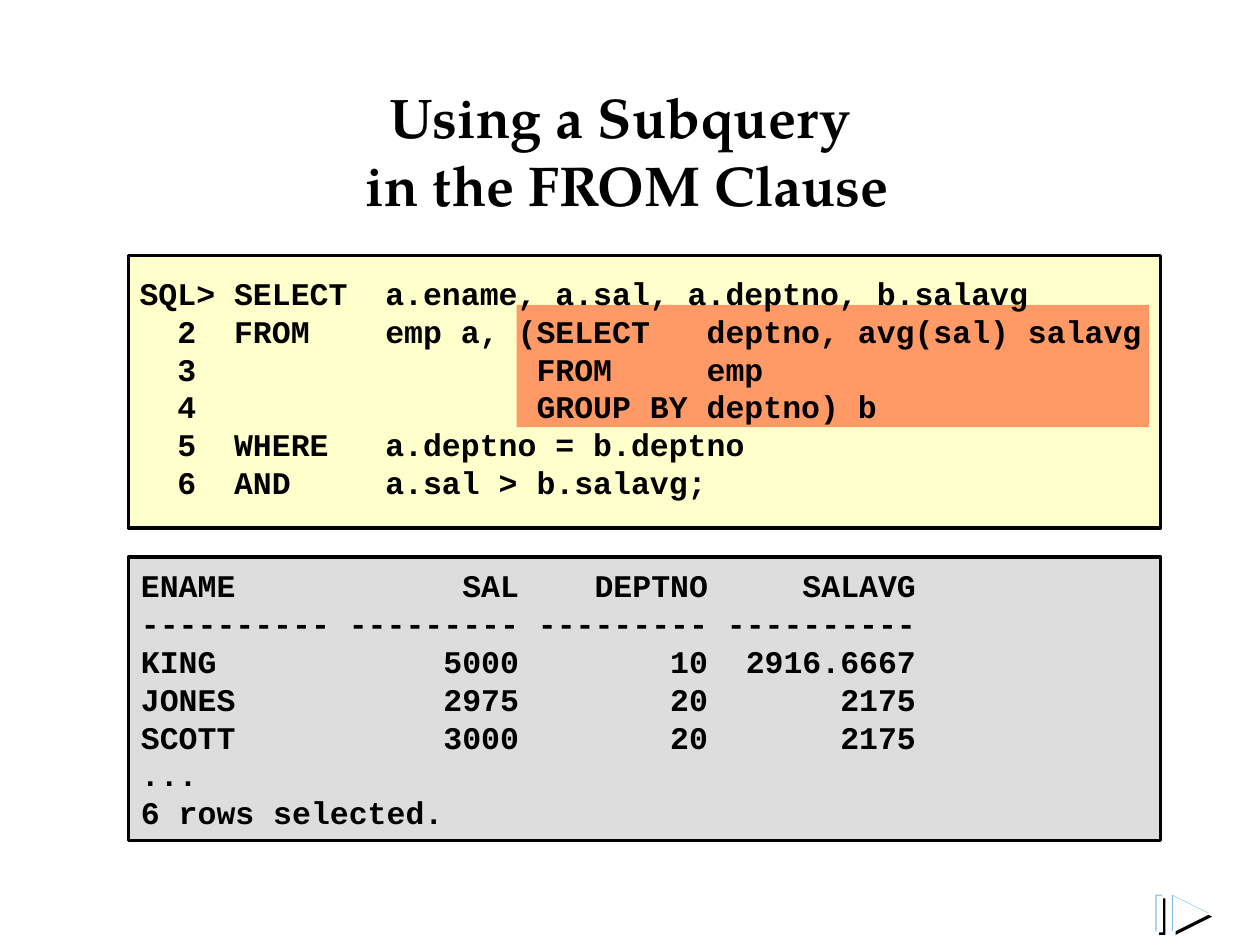
from pptx import Presentation
from pptx.dml.color import RGBColor
from pptx.enum import shapes, text
from pptx.util import Inches, Pt

COLORS = {"black": "000000", "white": "FFFFFF", "code": "FFFFCC",
          "subquery": "FF9966", "result": "DDDDDD", "edge": "7FC1EB"}
TITLE = ["Using a Subquery ", "in the FROM Clause"]
QUERY = [
    "SQL> SELECT  a.ename, a.sal, a.deptno, b.salavg",
    "  2  FROM    emp a, (SELECT   deptno, avg(sal) salavg",
    "  3                  FROM     emp",
    "  4                  GROUP BY deptno) b",
    "  5  WHERE   a.deptno = b.deptno",
    "  6  AND     a.sal > b.salavg;",
]
RESULT = [
    "ENAME            SAL    DEPTNO     SALAVG",
    "---------- --------- --------- ----------",
    "KING            5000        10  2916.6667",
    "JONES           2975        20       2175",
    "SCOTT           3000        20       2175",
    "...",
    "6 rows selected.",
]
# Bevel layers of the corner marker, back to front: colour, offset
BEVEL = [("black", 0.03), ("edge", 0), ("white", 0.01)]

deck = Presentation()
deck.slide_width, deck.slide_height = Inches(10), Inches(7.5)
page = deck.slides.add_slide(deck.slide_layouts[6])


def color(name):
    return RGBColor.from_string(COLORS[name])


def paint(shape, fill, outlined=False):
    shape.shadow.inherit = False
    shape.fill.solid()
    shape.fill.fore_color.rgb = color(fill)
    if outlined:
        shape.line.color.rgb = color("black")
        shape.line.width = Pt(2)
    else:
        shape.line.fill.background()


def add_panel(place, fill, outlined=False):
    panel = page.shapes.add_shape(shapes.MSO_SHAPE.RECTANGLE, *map(Inches, place))
    paint(panel, fill, outlined)
    return panel


def style(font, name, size):
    font.name, font.size, font.bold = name, Pt(size), True
    font.color.rgb = color("black")


def write_listing(box, lines):
    frame = box.text_frame
    frame.word_wrap = True
    frame.vertical_anchor = text.MSO_ANCHOR.MIDDLE
    for number, line in enumerate(lines):
        para = frame.paragraphs[0] if number == 0 else frame.add_paragraph()
        para.alignment = text.PP_ALIGN.LEFT
        span = para.add_run()
        span.text = line
        style(span.font, "Courier New", 18)


# Query panel with the subquery highlighted
add_panel((1.02, 2.03, 8.19, 2.16), "code", outlined=True)
add_panel((4.1, 2.42, 5.02, 0.97), "subquery")
query_box = page.shapes.add_textbox(*map(Inches, (1.01, 2.2, 8.2, 1.75)))
write_listing(query_box, QUERY)

# Title
title_box = page.shapes.add_textbox(*map(Inches, (0.99, 0.61, 7.98, 0.96)))
title_box.text_frame.word_wrap = True
title = title_box.text_frame.paragraphs[0]
title.alignment = text.PP_ALIGN.CENTER
for number, line in enumerate(TITLE):
    if number:
        title.add_line_break()
    span = title.add_run()
    span.text = line
    style(span.font, "TeX Gyre Pagella", 32)

# Query output
write_listing(add_panel((1.02, 4.42, 8.19, 2.25), "result", outlined=True), RESULT)

# Corner marker: a bar and a triangle, each bevelled
for layer, offset in BEVEL:
    add_panel((9.17 + offset, 7.1 + offset, 0.05, 0.29), layer)
for layer, offset in BEVEL:
    left, top = 9.3 + offset, 7.1 + offset
    outline = page.shapes.build_freeform(Inches(left), Inches(top), scale=1.0)
    outline.add_line_segments([(Inches(left), Inches(top + 0.29)),
                               (Inches(left + 0.29), Inches(top + 0.145))])
    paint(outline.convert_to_shape(), layer)

deck.save("out.pptx")
